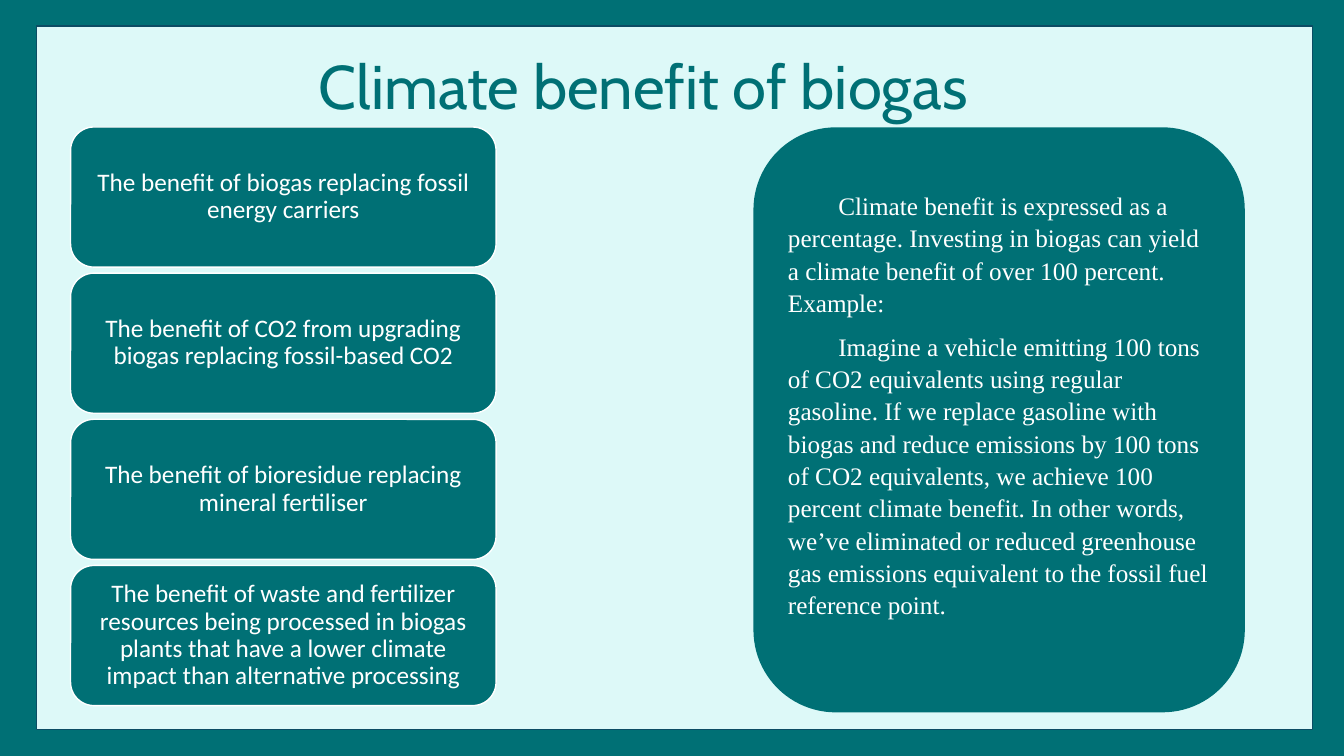
from dataclasses import dataclass

from pptx import Presentation
from pptx.dml.color import RGBColor
from pptx.enum.shapes import MSO_SHAPE
from pptx.enum.text import MSO_ANCHOR, MSO_AUTO_SIZE, PP_ALIGN
from pptx.shapes.autoshape import Shape
from pptx.slide import Slide
from pptx.text.text import TextFrame
from pptx.util import Emu, Pt

RECT = MSO_SHAPE.RECTANGLE
ROUND = MSO_SHAPE.ROUNDED_RECTANGLE
TOP, MIDDLE = MSO_ANCHOR.TOP, MSO_ANCHOR.MIDDLE
LEFT, CENTER = PP_ALIGN.LEFT, PP_ALIGN.CENTER
FIXED = MSO_AUTO_SIZE.NONE

TEAL = RGBColor(0x00, 0x70, 0x75)
MINT = RGBColor(0xDD, 0xF9, 0xF8)
NAVY = RGBColor(0x0C, 0x4C, 0x64)
WHITE = RGBColor(0xFF, 0xFF, 0xFF)

SCALE = 9144
PITCH = 145

BENEFITS = (
    "The benefit of biogas replacing fossil energy carriers",
    "The benefit of CO2 from upgrading biogas replacing fossil-based CO2",
    "The benefit of bioresidue replacing mineral fertiliser",
    "The benefit of waste and fertilizer resources being processed in biogas "
    "plants that have a lower climate impact than alternative processing",
)
EXAMPLE = (
    "Climate benefit is expressed as a percentage. Investing in biogas can "
    "yield a climate benefit of over 100 percent. Example:",
    "Imagine a vehicle emitting 100 tons of CO2 equivalents using regular "
    "gasoline. If we replace gasoline with biogas and reduce emissions by "
    "100 tons of CO2 equivalents, we achieve 100 percent climate benefit. "
    "In other words, we’ve eliminated or reduced greenhouse gas emissions "
    "equivalent to the fossil fuel reference point.",
)


@dataclass(frozen=True)
class Box:
    left: int
    top: int
    width: int
    height: int


@dataclass(frozen=True)
class Style:
    font: str
    size: int
    color: RGBColor
    align: PP_ALIGN
    spacing: float = 1.0
    after: int = 0
    indent: int = 0


HEAD = Style("Cabin", 44, TEAL, LEFT)
LABEL = Style("Calibri", 18, WHITE, CENTER, spacing=0.9)
PROSE = Style("Times New Roman", 18, WHITE, LEFT, 1.07, 8, 50)


def px(value: int) -> Emu:
    return Emu(value * SCALE)


def draw(slide: Slide, kind: MSO_SHAPE, box: Box, fill: RGBColor, line: RGBColor) -> Shape:
    shape = slide.shapes.add_shape(
        kind, px(box.left), px(box.top), px(box.width), px(box.height)
    )
    shape.shadow.inherit = False
    shape.fill.solid()
    shape.fill.fore_color.rgb = fill
    shape.line.color.rgb = line
    shape.line.width = Pt(1)
    return shape


def write(frame: TextFrame, texts: tuple[str, ...], style: Style, anchor: MSO_ANCHOR) -> None:
    frame.word_wrap = True
    frame.auto_size = FIXED
    frame.vertical_anchor = anchor
    frame.text = "\n".join(texts)
    for para in frame.paragraphs:
        para.alignment = style.align
        para.line_spacing = style.spacing
        para.space_before = Pt(0)
        para.space_after = Pt(style.after)
        if style.indent:
            para._p.get_or_add_pPr().set("indent", str(px(style.indent)))
        para.font.name = style.font
        para.font.size = Pt(style.size)
        para.font.color.rgb = style.color


def pad(frame: TextFrame, side: int, top: int, bottom: int) -> None:
    frame.margin_left = frame.margin_right = px(side)
    frame.margin_top, frame.margin_bottom = px(top), px(bottom)


def main() -> None:
    deck = Presentation()
    deck.slide_width, deck.slide_height = px(1333), px(750)
    slide = deck.slides.add_slide(deck.slide_layouts[5])
    slide.background.fill.solid()
    slide.background.fill.fore_color.rgb = TEAL

    panel = draw(slide, RECT, Box(36, 26, 1266, 698), MINT, NAVY)

    title = slide.shapes.title
    panel._element.addnext(title._element)
    title.left, title.top = px(306), px(43)
    title.width, title.height = px(745), px(84)
    write(title.text_frame, ("Climate benefit of biogas",), HEAD, TOP)

    for row, text in enumerate(BENEFITS):
        card = draw(slide, ROUND, Box(70, 126 + row * PITCH, 422, 139), TEAL, WHITE)
        pad(card.text_frame, 7, 7, 7)
        write(card.text_frame, (text,), LABEL, MIDDLE)

    note = draw(slide, ROUND, Box(748, 127, 486, 579), TEAL, TEAL)
    pad(note.text_frame, 10, 5, 36)
    write(note.text_frame, EXAMPLE, PROSE, MIDDLE)

    deck.save("out.pptx")


if __name__ == "__main__":
    main()
